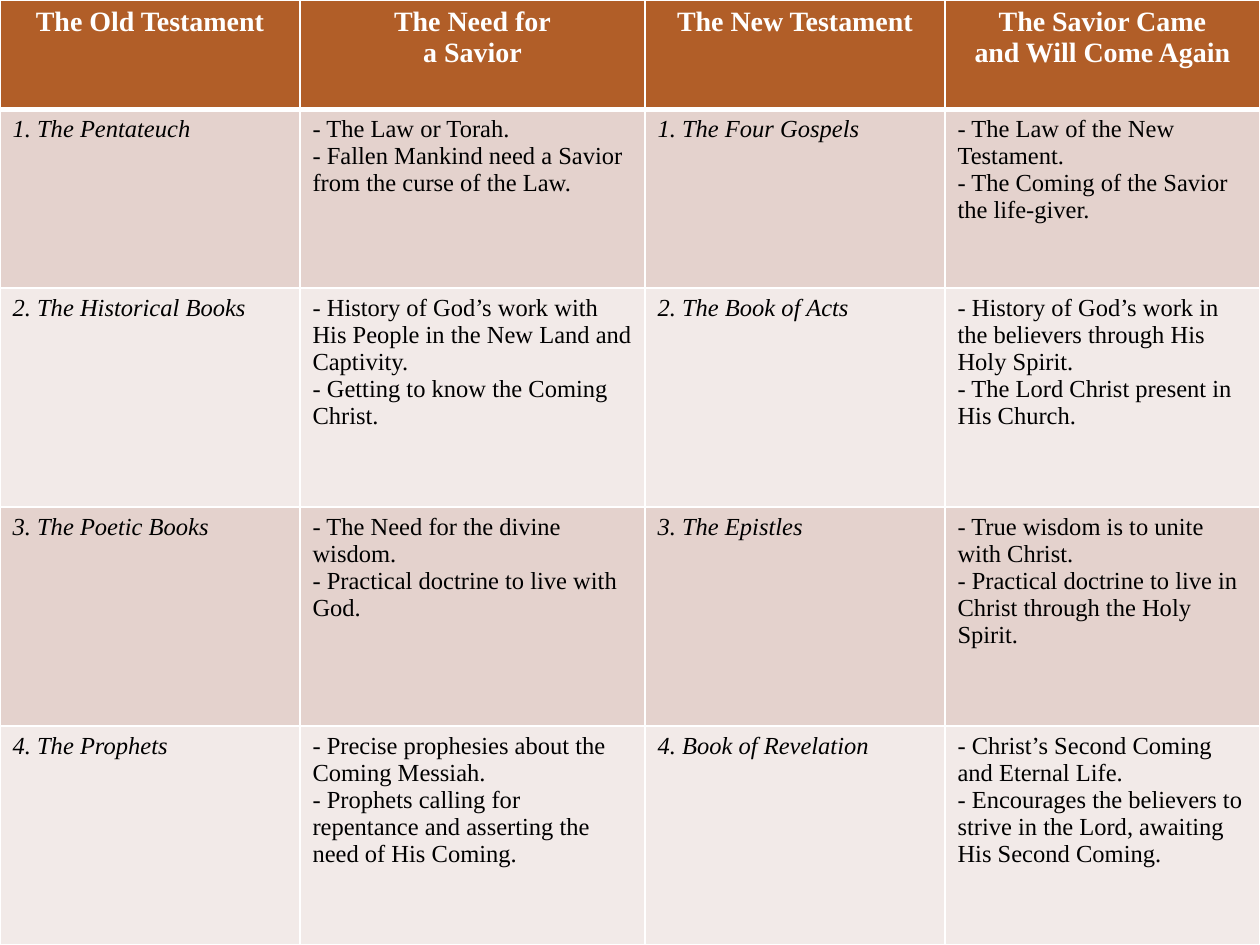
from lxml.etree import fromstring
from pptx import Presentation
from pptx.dml.color import RGBColor
from pptx.enum.text import PP_ALIGN
from pptx.oxml.ns import nsdecls
from pptx.util import Pt

HUES = {"head": "B15E28", "dark": "E4D2CD", "light": "F2EAE8",
        "white": "FFFFFF", "black": "000000"}
FONT = "Times New Roman"
COLS = [171.4, 197.2, 171.4, 180]
ROWS = [62.4, 102.3, 125.1, 125.1, 125.1]
CELLS = [
    ["The Old Testament", "The Need for\na Savior",
     "The New Testament", "The Savior Came\nand Will Come Again"],
    ["1. The Pentateuch",
     "- The Law or Torah.\n- Fallen Mankind need a Savior from the curse of the Law.",
     "1. The Four Gospels",
     "- The Law of the New Testament.\n- The Coming of the Savior the life-giver."],
    ["2. The Historical Books",
     "- History of God’s work with His People in the New Land and Captivity.\n"
     "- Getting to know the Coming Christ.",
     "2. The Book of Acts",
     "- History of God’s work in the believers through His Holy Spirit.\n"
     "- The Lord Christ present in His Church."],
    ["3. The Poetic Books",
     "- The Need for the divine wisdom.\n- Practical doctrine to live with God.",
     "3. The Epistles",
     "- True wisdom is to unite with Christ.\n"
     "- Practical doctrine to live in Christ through the Holy Spirit."],
    ["4. The Prophets",
     "- Precise prophesies about the Coming Messiah.\n"
     "- Prophets calling for repentance and asserting the need of His Coming.",
     "4. Book of Revelation",
     "- Christ’s Second Coming and Eternal Life.\n"
     "- Encourages the believers to strive in the Lord, awaiting His Second Coming."],
]


def color(name):
    """Return the named colour."""
    return RGBColor.from_string(HUES[name])


def rule(cell, top, base):
    """Draw white borders, with the given top and bottom widths."""
    props = cell._tc.get_or_add_tcPr()
    for spot, (side, width) in enumerate(zip("LRTB", (1, 1, top, base))):
        props.insert(spot, fromstring(
            f'<a:ln{side} {nsdecls("a")} w="{Pt(width)}"><a:solidFill>'
            f'<a:srgbClr val="{HUES["white"]}"/></a:solidFill></a:ln{side}>'))


def style(cell, text, row, col):
    """Fill one cell with text in the look of its row and column."""
    head = row == 0
    cell.text = text
    cell.fill.solid()
    cell.fill.fore_color.rgb = color("head" if head else "dark" if row % 2 else "light")
    rule(cell, 3 if row == 1 else 1, 3 if head else 1)
    for para in cell.text_frame.paragraphs:
        para.alignment = PP_ALIGN.CENTER if head else PP_ALIGN.LEFT
        font = para.font
        font.name = FONT
        font.size = Pt(16 if head else 14)
        font.bold = head
        font.italic = not head and col % 2 == 0
        font.color.rgb = color("white" if head else "black")


def grid(slide, left, top, width, height):
    """Place the table of both Testaments in the given box."""
    table = slide.shapes.add_table(len(ROWS), len(COLS), Pt(left), Pt(top),
                                   Pt(width), Pt(height)).table
    for col, size in zip(table.columns, COLS):
        col.width = Pt(size * width / sum(COLS))
    for row, size in zip(table.rows, ROWS):
        row.height = Pt(size * height / sum(ROWS))
    for row, texts in enumerate(CELLS):
        for col, text in enumerate(texts):
            style(table.cell(row, col), text, row, col)


def main():
    """Build and save the slide."""
    deck = Presentation()
    deck.slide_width, deck.slide_height = Pt(720), Pt(540)
    slide = deck.slides.add_slide(deck.slide_layouts[6])
    grid(slide, 0, 0, 720, 540)
    deck.save("out.pptx")


if __name__ == "__main__":
    main()
